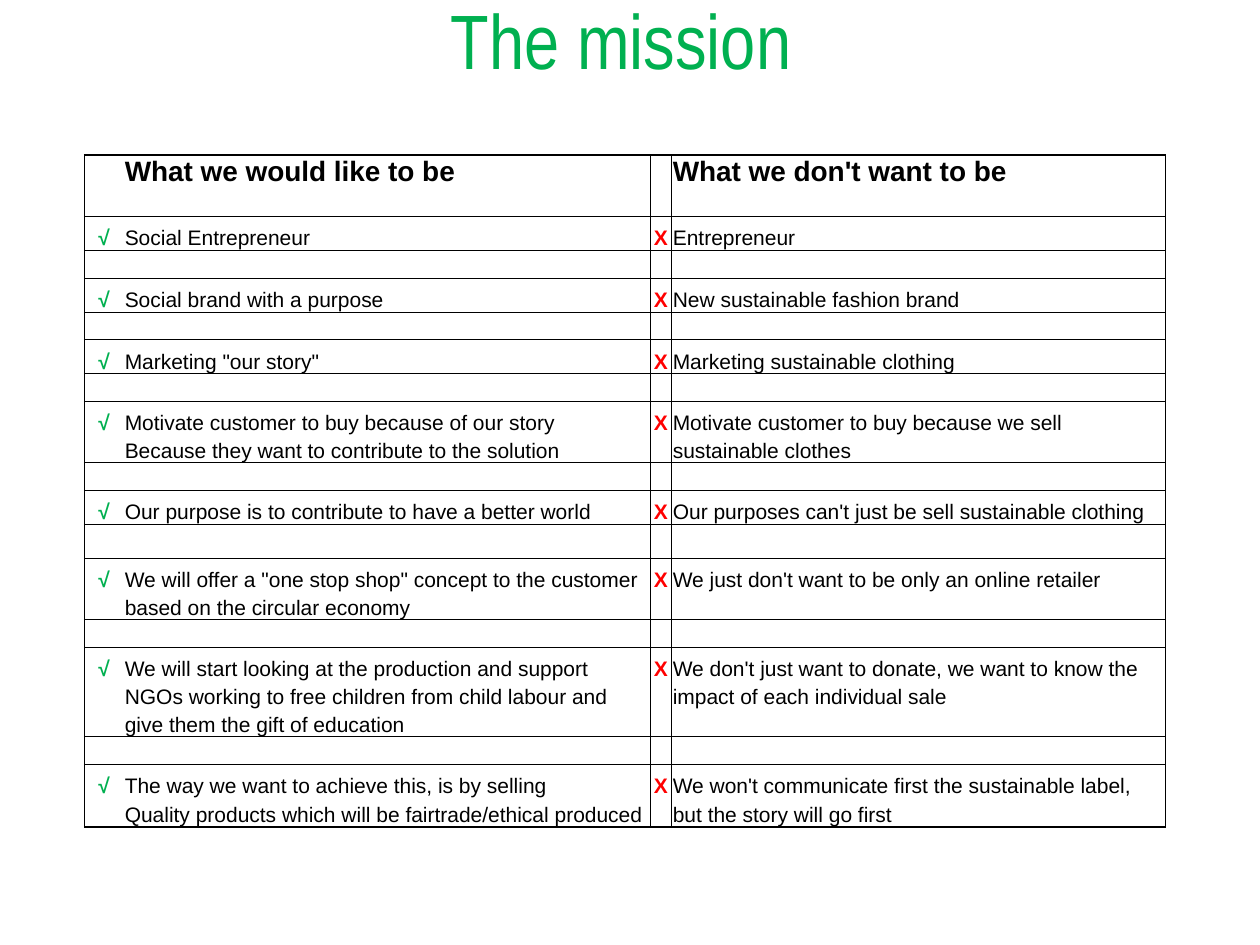
from itertools import zip_longest
from lxml.etree import SubElement
from pptx import Presentation
from pptx.dml.color import RGBColor
from pptx.enum.text import MSO_ANCHOR, MSO_AUTO_SIZE, PP_ALIGN
from pptx.oxml.ns import qn
from pptx.util import Pt

GREEN, RED, BLACK = "00B050", "FF0000", "000000"
THIN, THICK = 0.5, 1
GAP, FIRST, LINE, LAST = 15.8, 19.4, 15.8, 16.6
COLUMNS = (22.3, 301, 12.2, 282.2)
NO_STYLE = "{2D5ABB26-0587-4C30-8999-92F81FD0307C}"
HEADINGS = ("What we would like to be", "What we don't want to be")
ENTRIES = [
    (["Social Entrepreneur"], ["Entrepreneur"]),
    (["Social brand with a purpose"], ["New sustainable fashion brand"]),
    (['Marketing "our story"'], ["Marketing sustainable clothing"]),
    (["Motivate customer to buy because of our story",
      "Because they want to contribute to the solution"],
     ["Motivate customer to buy because we sell", "sustainable clothes"]),
    (["Our purpose is to contribute to have a better world"],
     ["Our purposes can't just be sell sustainable clothing"]),
    (['We will offer a "one stop shop" concept to the customer',
      "based on the circular economy"],
     ["We just don't want to be only an online retailer"]),
    (["We will start looking at the production and support",
      "NGOs working to free children from child labour and",
      "give them the gift of education"],
     ["We don't just want to donate, we want to know the",
      "impact of each individual sale"]),
    (["The way we want to achieve this, is by selling",
      "Quality products which will be fairtrade/ethical produced"],
     ["We won't communicate first the sustainable label,",
      "but the story will go first"]),
]
TALL_GAP_ENTRY = 5


def color(value):
    return RGBColor.from_string(value)


def style(p, size, value, bold=False, name="Arial"):
    for r in p.runs:
        r.font.size = Pt(size)
        r.font.name = name
        r.font.bold = bold
        r.font.color.rgb = color(value)


def border(cell, side, width):
    ln = SubElement(cell._tc.get_or_add_tcPr(), qn("a:ln" + side), w=str(Pt(width)))
    fill = SubElement(ln, qn("a:solidFill"))
    SubElement(fill, qn("a:srgbClr"), val=BLACK)


def fill_cell(cell, text, size, value, bold, centered):
    cell.margin_left = cell.margin_right = cell.margin_top = Pt(0.72)
    cell.margin_bottom = Pt(0)
    cell.vertical_anchor = MSO_ANCHOR.BOTTOM
    p = cell.text_frame.paragraphs[0]
    if text:
        p.text = text
        p.alignment = PP_ALIGN.CENTER if centered else PP_ALIGN.LEFT
        style(p, size, value, bold)
    else:
        SubElement(p._p, qn("a:endParaRPr"), sz="1200")


def comparison_rows():
    blank = ("",) * 4
    rows = [(GAP, ("", HEADINGS[0], "", HEADINGS[1]), 0), (LAST, blank, THICK)]
    for i, (wanted, unwanted) in enumerate(ENTRIES):
        if i:
            rows.append((FIRST if i == TALL_GAP_ENTRY else GAP, blank, 0))
        lines = list(zip_longest(wanted, unwanted, fillvalue=""))
        for j, (left, right) in enumerate(lines):
            marks = ("", "") if j else ("√", "X")
            end = THIN if j == len(lines) - 1 else 0
            rows.append((LINE if j else FIRST, (marks[0], left, marks[1], right), end))
    rows[-1] = (LAST, rows[-1][1], THICK)
    return rows


def add_title(s, x, y, w, h):
    sp = s.shapes.title
    sp.left, sp.top, sp.width, sp.height = Pt(x), Pt(y), Pt(w), Pt(h)
    tf = sp.text_frame
    tf.text = "The mission"
    tf.auto_size = MSO_AUTO_SIZE.NONE
    tf.vertical_anchor = MSO_ANCHOR.MIDDLE
    p = tf.paragraphs[0]
    p.alignment = PP_ALIGN.CENTER
    style(p, 44, GREEN, name="Arial Narrow")


def add_comparison(s, x, y, w, h):
    rows = comparison_rows()
    frame = s.shapes.add_table(len(rows), len(COLUMNS), Pt(x), Pt(y), Pt(w), Pt(h))
    table = frame.table
    table.first_row = table.horz_banding = False
    table._tbl.tblPr.find(qn("a:tableStyleId")).text = NO_STYLE
    for column, width in zip(table.columns, COLUMNS):
        column.width = Pt(width)
    above = THICK
    for i, (height, texts, below) in enumerate(rows):
        table.rows[i].height = Pt(height)
        for j, text in enumerate(texts):
            cell = table.cell(i, j)
            is_mark = j % 2 == 0
            value = (GREEN, RED)[j // 2] if is_mark else BLACK
            fill_cell(cell, text, 12 if i else 16, value, is_mark or i == 0, is_mark)
            sides = {
                "L": (THICK, 0, THIN, 0)[j],
                "R": (0, THIN, 0, THICK)[j],
                "T": above,
                "B": below,
            }
            for side, width in sides.items():
                if width:
                    border(cell, side, width)
            cell.fill.background()
        above = below


def main():
    prs = Presentation()
    prs.slide_width, prs.slide_height = Pt(720), Pt(540)
    s = prs.slides.add_slide(prs.slide_layouts[5])
    add_title(s, 31, 0, 648, 44)
    add_comparison(s, 48.3, 88.6, sum(COLUMNS), 383.8)
    prs.save("out.pptx")


if __name__ == "__main__":
    main()
